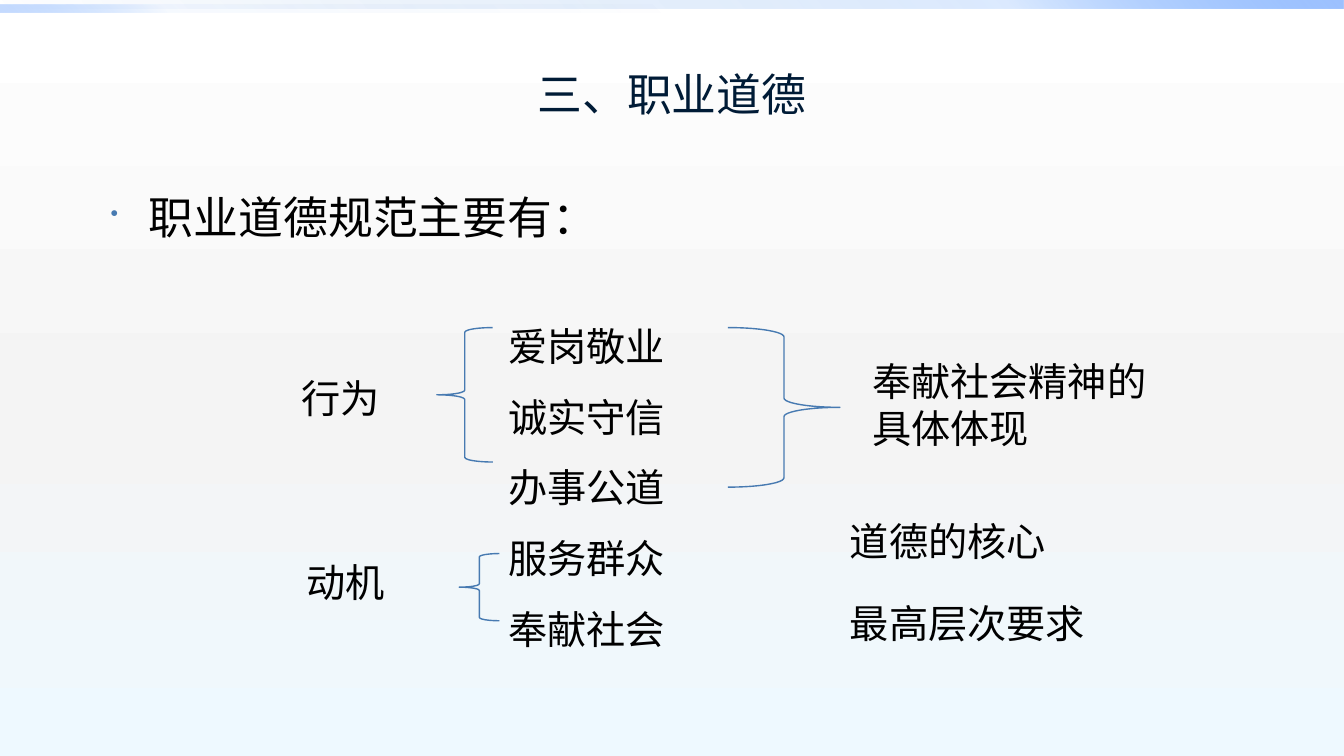
import pptx
import pptx.util
import pptx.dml.color
import pptx.enum.shapes
import pptx.enum.text
import pptx.oxml.ns
import lxml.etree

THEME = {
    "title": "001B36", "text": "000000", "accent": "477AB1",
    "title_size": 32, "label_size": 28,
    "title_font": "Arial", "body_font": "Cambria", "label_font": "Noto Sans CJK SC",
    "page": [(0, "FFFFFF", 100), (55, "F4F4F4", 100), (100, "EEF9FF", 100)],
    "band": [(0, "0058B7", 0), (75, "4F95FF", 20), (100, "9EC2FF", 100)],
    "band_glow": [(0, "0058B7", 0), (75, "4F95FF", 5), (100, "9EC2FF", 60)],
}
qn = pptx.oxml.ns.qn
SHAPE = pptx.enum.shapes.MSO_SHAPE
ALIGN = pptx.enum.text.PP_ALIGN
ANCHOR = pptx.enum.text.MSO_ANCHOR

deck = pptx.Presentation()
deck.slide_width = pptx.util.Inches(13.333)
deck.slide_height = pptx.util.Inches(7.5)
page = deck.slides.add_slide(deck.slide_layouts[6])
COLUMN = deck.slide_width / 120
ROW = deck.slide_height / 90


def cells(left, top, width, height):
    return [round(n * unit) for n, unit in
            ((left, COLUMN), (top, ROW), (width, COLUMN), (height, ROW))]


def paint_gradient(fill, element, stops, angle):
    fill.gradient()
    gradient = element.xpath(".//a:gradFill")[0]
    for child in list(gradient):
        gradient.remove(child)
    stop_list = lxml.etree.SubElement(gradient, qn("a:gsLst"))
    for position, color, opacity in stops:
        stop = lxml.etree.SubElement(stop_list, qn("a:gs"), pos=str(position * 1000))
        tone = lxml.etree.SubElement(stop, qn("a:srgbClr"), val=color)
        if opacity < 100:
            lxml.etree.SubElement(tone, qn("a:alpha"), val=str(opacity * 1000))
    lxml.etree.SubElement(gradient, qn("a:lin"), ang=str(angle * 60000), scaled="0")


paint_gradient(page.background.fill, page.element, THEME["page"], 90)

for area, stops, angle in [
    ((0, 0, 120, 1), "band", 315),
    ((0, 0.5, 60, 1), "band_glow", 135),
]:
    band = page.shapes.add_shape(SHAPE.RECTANGLE, *cells(*area))
    band.shadow.inherit = False
    band.line.fill.background()
    paint_gradient(band.fill, band.element, THEME[stops], angle)

for kind, area in [
    (SHAPE.LEFT_BRACE, (41, 65.9, 3.6, 8)),
    (SHAPE.LEFT_BRACE, (39, 39, 5, 16)),
    (SHAPE.RIGHT_BRACE, (65, 39, 10, 19)),
]:
    brace = page.shapes.add_shape(kind, *cells(*area))
    brace.shadow.inherit = False
    brace.fill.background()
    brace.line.color.rgb = pptx.dml.color.RGBColor.from_string(THEME["accent"])
    brace.line.width = pptx.util.Pt(1)

LABEL = {"font": "label_font", "size": "label_size", "color": "text"}
TITLE = {"font": "title_font", "size": "title_size", "color": "title",
         "frame": {"vertical_anchor": ANCHOR.MIDDLE}, "para": {"alignment": ALIGN.CENTER}}
BODY = {"font": "body_font", "size": "title_size", "color": "text", "bullet": True}
NORMS = {**LABEL, "frame": {"margin_left": pptx.util.Inches(0.6)},
         "para": {"line_spacing": 1.5}}

for area, lines, style in [
    ((6, 3.6, 108, 15), ["三、职业道德"], TITLE),
    ((9, 22, 54, 18), ["职业道德规范主要有："], BODY),
    ((40, 35, 26, 43.7), ["爱岗敬业", "诚实守信", "办事公道", "服务群众", "奉献社会"], NORMS),
    ((75, 70.7, 32, 10.6), ["最高层次要求"], LABEL),
    ((26, 44, 13, 6.8), ["行为"], LABEL),
    ((26.5, 65.9, 12, 6.8), ["动机"], LABEL),
    ((75, 61, 24, 6.8), ["道德的核心"], LABEL),
    ((77, 42, 29, 12.5), ["奉献社会精神的具体体现"], LABEL),
]:
    box = page.shapes.add_textbox(*cells(*area))
    frame = box.text_frame
    frame.word_wrap = True
    for name, value in style.get("frame", {}).items():
        setattr(frame, name, value)
    for index, line in enumerate(lines):
        para = frame.add_paragraph() if index else frame.paragraphs[0]
        if style.get("bullet"):
            settings = para._p.get_or_add_pPr()
            indent = pptx.util.Inches(0.38)
            settings.set("marL", str(indent))
            settings.set("indent", str(-indent))
            tone = lxml.etree.SubElement(settings, qn("a:buClr"))
            lxml.etree.SubElement(tone, qn("a:srgbClr"), val=THEME["accent"])
            lxml.etree.SubElement(settings, qn("a:buSzPct"), val="50000")
            lxml.etree.SubElement(settings, qn("a:buChar"), char="•")
        for name, value in style.get("para", {}).items():
            setattr(para, name, value)
        span = para.add_run()
        span.text = line
        span.font.name = THEME[style["font"]]
        span.font.size = pptx.util.Pt(THEME[style["size"]])
        span.font.color.rgb = pptx.dml.color.RGBColor.from_string(THEME[style["color"]])
        lxml.etree.SubElement(span.font._element, qn("a:ea"), typeface=THEME["label_font"])

deck.save("out.pptx")
